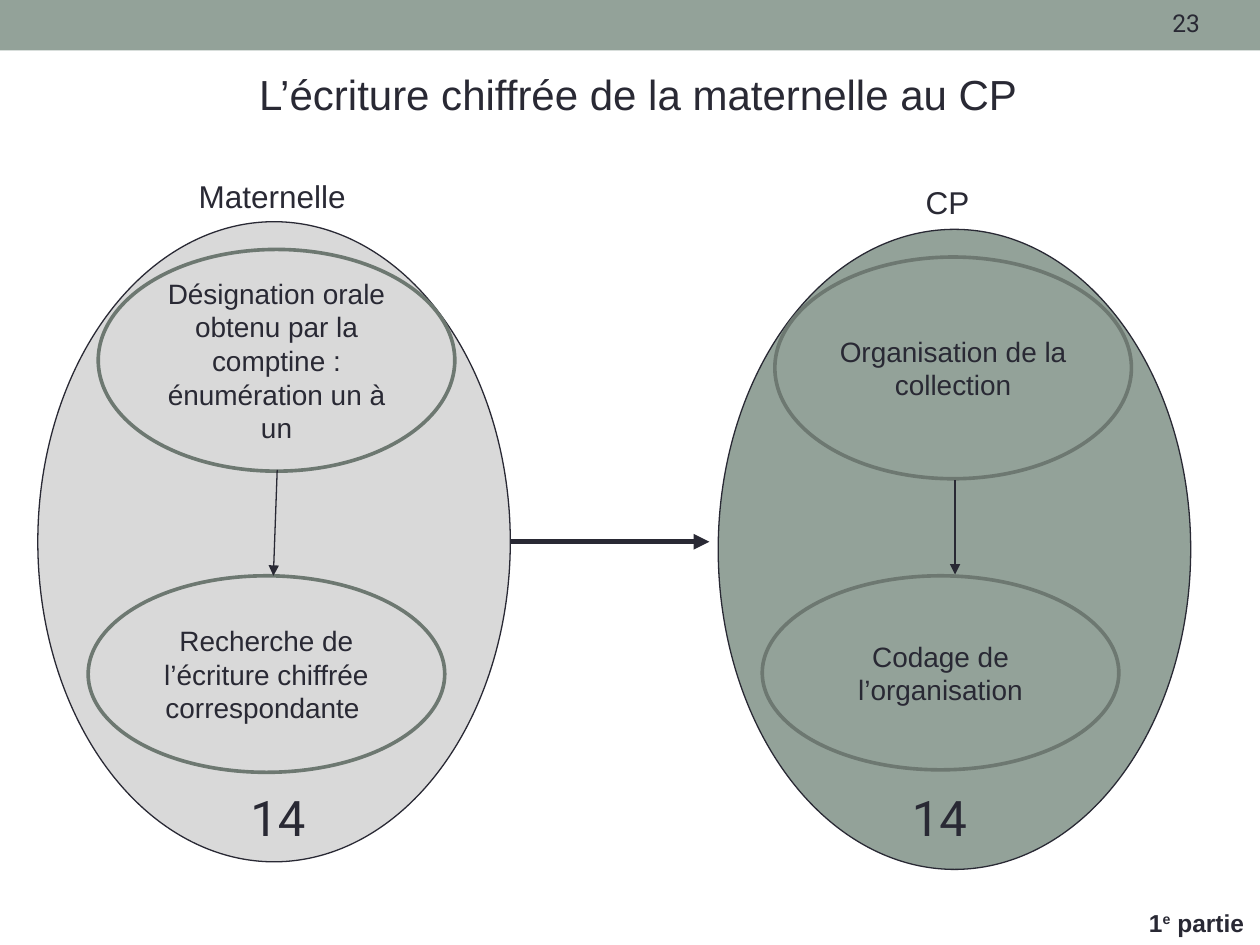
from lxml import etree
from pptx import Presentation
from pptx.dml.color import RGBColor
from pptx.enum import shapes, text
from pptx.oxml import ns
from pptx.util import Inches, Pt

INK = RGBColor(0x29, 0x29, 0x34)
SAGE = RGBColor(0x93, 0xA2, 0x99)
GRAY = RGBColor(0xD9, 0xD9, 0xD9)
MOSS = RGBColor(0x6D, 0x78, 0x71)
MID = text.MSO_ANCHOR.MIDDLE
TOP = text.MSO_ANCHOR.TOP
LEFT = text.PP_ALIGN.LEFT
CENTER = text.PP_ALIGN.CENTER


def write(frame, *runs, size=16, font="Arial", bold=False, align=CENTER,
          anchor=TOP, space=None):
    """Fill the frame with one paragraph; a run given as a tuple is raised."""
    frame.word_wrap = True
    frame.auto_size = text.MSO_AUTO_SIZE.NONE
    frame.vertical_anchor = anchor
    para = frame.paragraphs[0]
    para.alignment = align
    para.line_spacing = space
    for item in runs:
        run = para.add_run()
        run.text = item[0] if isinstance(item, tuple) else item
        run.font.size = Pt(size)
        run.font.name = font
        run.font.bold = bold
        run.font.color.rgb = INK
        if isinstance(item, tuple):
            run.font._element.set("baseline", "30000")


class Deck:
    def __init__(self):
        self.prs = Presentation()
        self.prs.slide_width = Inches(10)
        self.prs.slide_height = Inches(7.5)
        self.slide = self.prs.slides.add_slide(self.prs.slide_layouts[5])

    def shape(self, kind, box, fill, line=None, width=0.75):
        item = self.slide.shapes.add_shape(kind, *map(Inches, box))
        item.shadow.inherit = False
        item.fill.solid()
        item.fill.fore_color.rgb = fill
        if line is None:
            item.line.fill.background()
        else:
            item.line.color.rgb = line
            item.line.width = Pt(width)
        return item

    def band(self, box):
        self.shape(shapes.MSO_SHAPE.RECTANGLE, box, SAGE)

    def oval(self, box, fill, label=None):
        """Draw a large plain oval, or a step oval when a label is given."""
        line, width = (MOSS, 2.08) if label else (INK, 0.75)
        item = self.shape(shapes.MSO_SHAPE.OVAL, box, fill, line, width)
        if label:
            write(item.text_frame, label, anchor=MID)

    def arrow(self, start, end, width=0.75):
        line = self.slide.shapes.add_connector(
            shapes.MSO_CONNECTOR.STRAIGHT, *map(Inches, start + end))
        line.line.color.rgb = INK
        line.line.width = Pt(width)
        tip = etree.SubElement(line.line._get_or_add_ln(), ns.qn("a:tailEnd"))
        tip.set("type", "triangle")
        etree.SubElement(line._element.spPr, ns.qn("a:effectLst"))

    def label(self, box, *runs, **style):
        item = self.slide.shapes.add_textbox(*map(Inches, box))
        write(item.text_frame, *runs, **style)

    def title(self, box, words):
        item = self.slide.shapes.title
        item.left, item.top, item.width, item.height = map(Inches, box)
        item.text_frame.margin_bottom = 0
        write(item.text_frame, words, size=24, space=0.8)


def main():
    deck = Deck()
    deck.band((0, 0, 10, 0.4))
    deck.label((8.83, 0, 1.17, 0.36), "23", size=14, font="Roboto", anchor=MID)
    deck.title((0.23, 0.57, 9.67, 0.57),
               "L’écriture chiffrée de la maternelle au CP")

    # Each stage: name and its place, fill, left and top of the large oval,
    # left of the number, then left, top, height and words of both steps
    stages = [
        ("Maternelle", 0.62, 1.36, GRAY, 0.3, 1.76, 0.62,
         [(0.78, 1.98, 1.76, "Désignation orale obtenu par la comptine : "
                             "énumération un à un"),
          (0.7, 4.57, 1.56, "Recherche de l’écriture chiffrée "
                            "correspondante ")]),
        ("CP", 5.98, 1.4, SAGE, 5.7, 1.82, 5.87,
         [(6.15, 2.04, 1.76, "Organisation de la collection"),
          (6.05, 4.57, 1.54, "Codage de l’organisation")]),
    ]
    for name, name_x, name_y, fill, left, top, num_x, steps in stages:
        deck.oval((left, top, 3.75, 5.08), fill)
        deck.label((name_x, name_y, 3.08, 0.4), name, size=18)
        deck.label((num_x, 6.2, 3.17, 0.57), "14", size=28, font="Roboto")
        for x, y, height, words in steps:
            deck.oval((x, y, 2.83, height), fill, words)

    deck.arrow((2.2, 3.73), (2.17, 4.57))
    deck.arrow((7.58, 3.81), (7.58, 4.56))
    deck.arrow((4.05, 4.3), (5.63, 4.3), width=3)
    deck.label((9.02, 7.14, 0.98, 0.36), "1", ("e",), " partie",
               size=14, bold=True, align=LEFT, anchor=MID)
    deck.prs.save("out.pptx")


if __name__ == "__main__":
    main()
